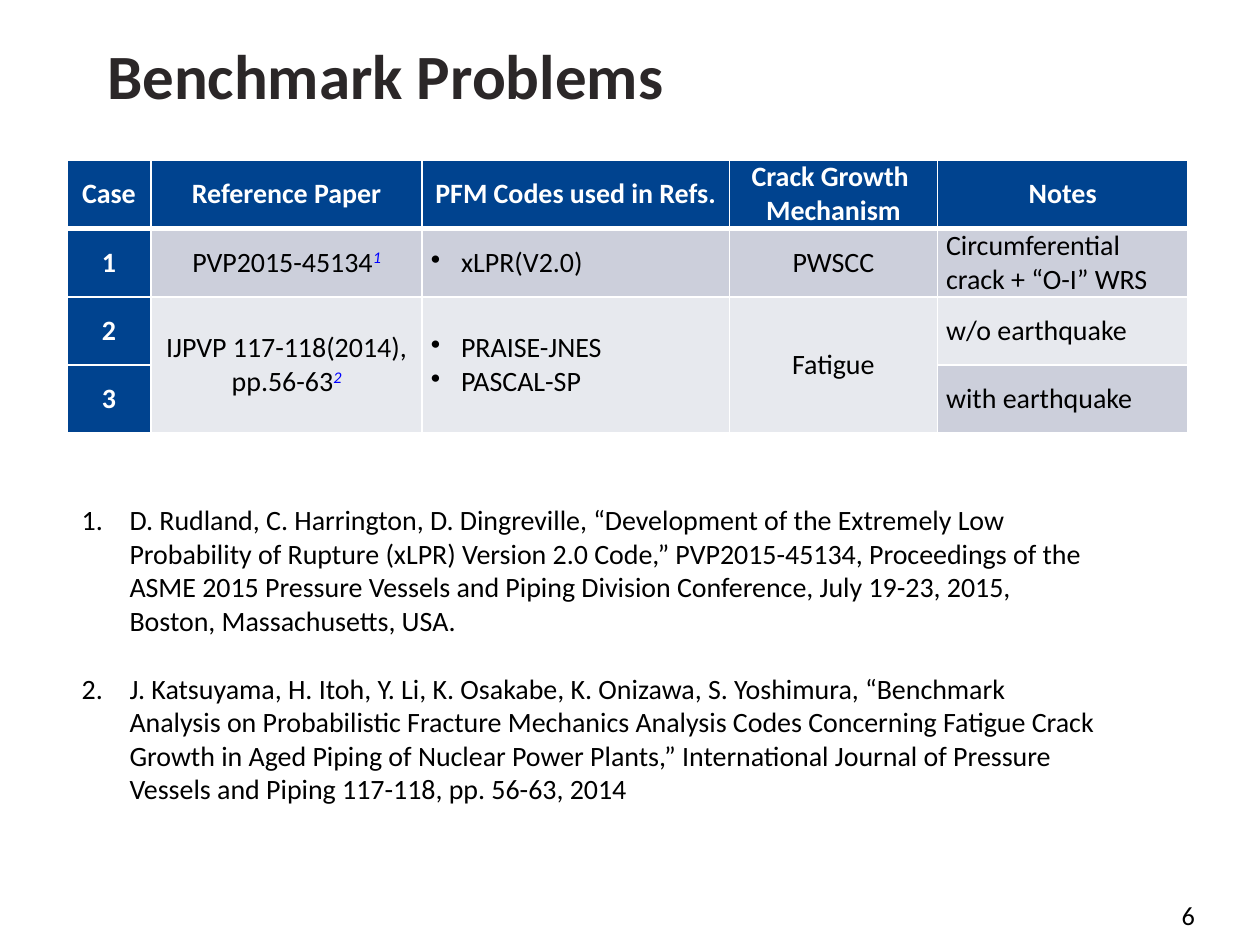
from lxml import etree
from pptx import Presentation
from pptx.dml.color import RGBColor
from pptx.enum import text as t
from pptx.oxml import ns
from pptx.util import Inches, Pt

NAVY = RGBColor(0x00, 0x43, 0x8F)
GREY = RGBColor(0xCC, 0xCF, 0xDB)
PALE = RGBColor(0xE7, 0xE9, 0xEE)
WHITE = RGBColor(0xFF, 0xFF, 0xFF)
BLACK = RGBColor(0, 0, 0)
BLUE = RGBColor(0, 0, 0xFF)
INK = RGBColor(0x2B, 0x27, 0x28)
FONT = "Calibri"

TITLE = "Benchmark Problems"
PAGE = "6"
HEAD = ["Case", "Reference Paper", "PFM Codes used in Refs.",
        "Crack Growth \nMechanism", "Notes"]
# Each cell is a list of paragraphs; None continues the cell above.
ROWS = [
    [["1"], ["PVP2015-45134"], ["xLPR(V2.0)"], ["PWSCC"],
     ["Circumferential crack + “O-I” WRS"]],
    [["2"], ["IJPVP 117-118(2014), pp.56-63"], ["PRAISE-JNES", "PASCAL-SP"],
     ["Fatigue"], ["w/o earthquake"]],
    [["3"], None, None, None, ["with earthquake"]],
]
MARKS = {(1, 1): "1", (2, 1): "2"}  # (row, column): reference number
BANDS = [GREY, PALE, GREY]
WIDTHS = [0.67, 2.15, 2.44, 1.65, 1.99]
HIGH = 0.54
CODES, NOTES = 2, 4
REFS = [
    "D. Rudland, C. Harrington, D. Dingreville, “Development of the Extremely "
    "Low Probability of Rupture (xLPR) Version 2.0 Code,” PVP2015-45134, "
    "Proceedings of the ASME 2015 Pressure Vessels and Piping Division "
    "Conference, July 19-23, 2015, Boston, Massachusetts, USA.",
    "J. Katsuyama, H. Itoh, Y. Li, K. Osakabe, K. Onizawa, S. Yoshimura, "
    "“Benchmark Analysis on Probabilistic Fracture Mechanics Analysis Codes "
    "Concerning Fatigue Crack Growth in Aged Piping of Nuclear Power Plants,” "
    "International Journal of Pressure Vessels and Piping 117-118, "
    "pp. 56-63, 2014",
]


def style(para, size, color, bold=False):
    font = para.font
    font.name, font.size, font.bold = FONT, Pt(size), bold
    font.color.rgb = color


def bullet(para, indent, tag, **attrs):
    """Give a paragraph a hanging indent and a bullet or number."""
    props = para._p.get_or_add_pPr()
    props.set("marL", str(Inches(indent)))
    props.set("indent", str(-Inches(indent)))
    etree.SubElement(props, ns.qn(tag), attrs)


def border(cell, top, bottom):
    props = cell._tc.get_or_add_tcPr()
    for side, width in zip("LRTB", (1, 1, top, bottom)):
        line = etree.SubElement(props, ns.qn(f"a:ln{side}"), w=str(Pt(width)))
        fill = etree.SubElement(line, ns.qn("a:solidFill"))
        etree.SubElement(fill, ns.qn("a:srgbClr"), val=str(WHITE))


def fill_cell(cell, row, col, lines):
    border(cell, 3 if row == 1 else 1, 3 if row == 0 else 1)
    dark = row == 0 or col == 0
    cell.fill.solid()
    cell.fill.fore_color.rgb = NAVY if dark else BANDS[row - 1]
    cell.vertical_anchor = t.MSO_ANCHOR.MIDDLE
    cell.margin_left = cell.margin_right = Inches(0.07)
    cell.margin_top = cell.margin_bottom = 0
    frame = cell.text_frame
    for i, line in enumerate(lines or []):
        para = frame.add_paragraph() if i else frame.paragraphs[0]
        para.text = line
        side = not dark and col in (CODES, NOTES)
        para.alignment = t.PP_ALIGN.JUSTIFY if side else t.PP_ALIGN.CENTER
        if side and col == CODES:
            bullet(para, 0.24, "a:buChar", char="•")
        style(para, 16, WHITE if dark else BLACK, dark)
    if (row, col) in MARKS:
        run = frame.paragraphs[0].add_run()
        run.text = MARKS[row, col]
        run.font.italic = True
        run.font.color.rgb = BLUE
        run._r.get_or_add_rPr().set("baseline", "30000")


def add_cases(slide):
    grid = [[[name] for name in HEAD]] + ROWS
    table = slide.shapes.add_table(
        len(grid), len(HEAD), Inches(0.53), Inches(1.27),
        Inches(sum(WIDTHS)), Inches(HIGH * len(grid))).table
    for col, width in zip(table.columns, WIDTHS):
        col.width = Inches(width)
    for r, cells in enumerate(grid):
        table.rows[r].height = Inches(HIGH)
        for c, lines in enumerate(cells):
            fill_cell(table.cell(r, c), r, c, lines)
            if lines is None:
                table.cell(r - 1, c).merge(table.cell(r, c))


def add_box(slide, left, top, width, height):
    frame = slide.shapes.add_textbox(
        Inches(left), Inches(top), Inches(width), Inches(height)).text_frame
    frame.word_wrap = True
    return frame


def main():
    deck = Presentation()
    deck.slide_width, deck.slide_height = Inches(10), Inches(7.5)
    slide = deck.slides.add_slide(deck.slide_layouts[5])

    title = slide.shapes.title
    title.left, title.top = Inches(0.75), Inches(0.13)
    title.width, title.height = Inches(8.71), Inches(0.92)
    title.text_frame.vertical_anchor = t.MSO_ANCHOR.MIDDLE
    para = title.text_frame.paragraphs[0]
    para.text = TITLE
    para.alignment = t.PP_ALIGN.LEFT
    style(para, 36, INK, True)

    add_cases(slide)

    frame = add_box(slide, 0.55, 3.94, 8.3, 2.52)
    for i, ref in enumerate(REFS):
        para = frame.add_paragraph() if i else frame.paragraphs[0]
        para.text = ref
        if i:
            para.space_before = Pt(19.5)
        bullet(para, 0.38, "a:buAutoNum", type="arabicPeriod")
        style(para, 16, BLACK)

    para = add_box(slide, 9.28, 7.09, 0.68, 0.4).paragraphs[0]
    para.text = PAGE
    style(para, 15, BLACK)

    deck.save("out.pptx")


if __name__ == "__main__":
    main()
